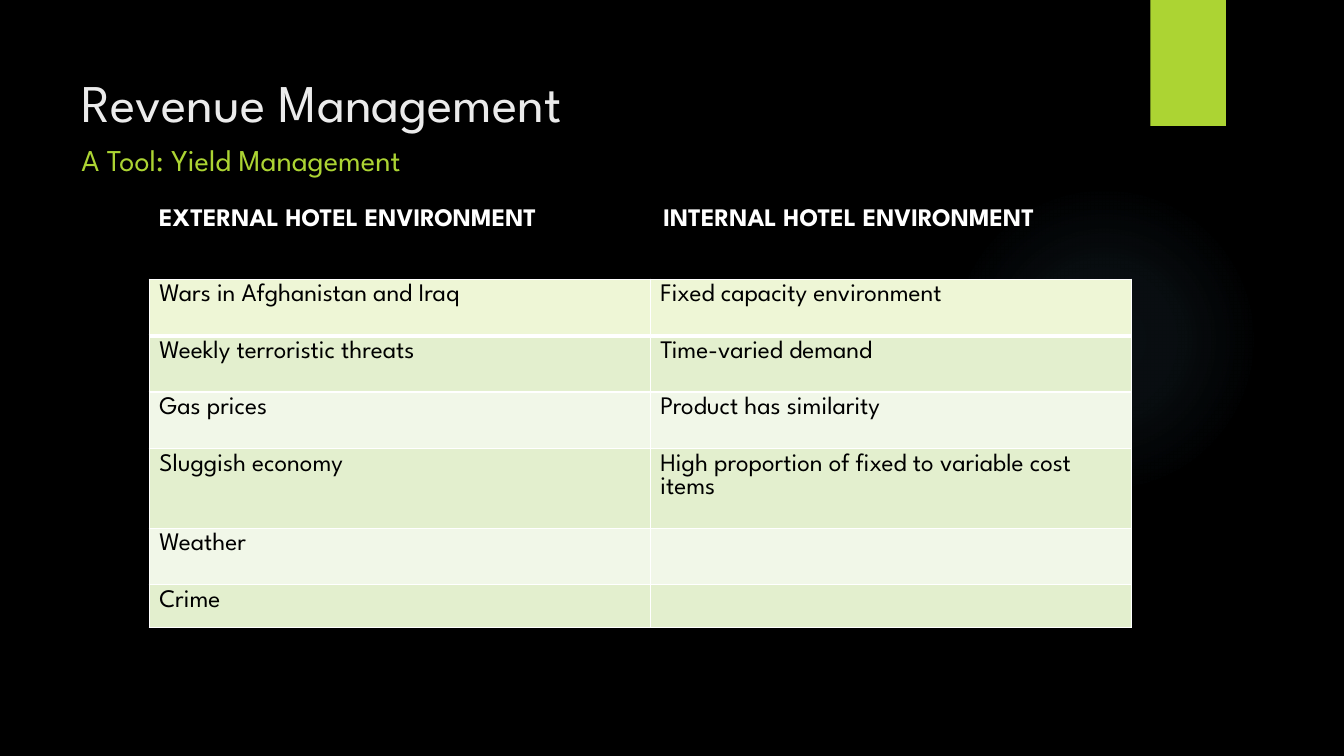
from dataclasses import dataclass

from lxml.etree import SubElement
from pptx import Presentation
from pptx.dml.color import RGBColor as Color
from pptx.enum.shapes import MSO_SHAPE as Preset
from pptx.oxml import parse_xml
from pptx.oxml.ns import nsdecls, qn
from pptx.util import Inches, Pt


@dataclass(frozen=True)
class Theme:
    font: str = "League Spartan"
    background: str = "000000"
    accent: str = "ACD433"
    glow: str = "7AC4F0"
    title: str = "EBEBEB"
    white: str = "FFFFFF"
    ink: str = "000000"
    first_row: str = "EEF6D6"
    bands: tuple = ("F1F7E8", "E3EFCE")
    title_size: float = 37.8
    subtitle_size: float = 21.6
    body_size: float = 18


THEME = Theme()
HEADINGS = ("EXTERNAL HOTEL ENVIRONMENT", "INTERNAL HOTEL ENVIRONMENT")
FACTORS = (
    ("Wars in Afghanistan and Iraq", "Fixed capacity environment"),
    ("Weekly terroristic threats", "Time-varied demand"),
    ("Gas prices", "Product has similarity"),
    ("Sluggish economy", "High proportion of fixed to variable cost items"),
    ("Weather", ""),
    ("Crime", ""),
)
ROW_SHARES = (0.56, 0.56, 0.56, 0.79, 0.56, 0.43)
COLUMN_SHARES = (4.97, 4.77)


def style(para, size, color, bold=False):
    for font in [para.font] + [span.font for span in para.runs]:
        font.name = THEME.font
        font.size = Pt(size)
        font.bold = bold
        font.color.rgb = Color.from_string(color)


def split(total, shares):
    return [int(total * share / sum(shares)) for share in shares]


def add_text_box(slide, box):
    frame = slide.shapes.add_textbox(*box).text_frame
    frame.word_wrap = True
    return frame


def add_plain_shape(slide, preset, box):
    shape = slide.shapes.add_shape(preset, *box)
    shape.shadow.inherit = False
    shape.line.fill.background()
    return shape


def add_decor(slide, glow_box, tab_box):
    glow = add_plain_shape(slide, Preset.OVAL, glow_box)
    stops = "".join(
        f'<a:gs pos="{place * 1000}"><a:srgbClr val="{THEME.glow}">'
        f'<a:alpha val="{alpha * 1000}"/></a:srgbClr></a:gs>'
        for place, alpha in ((0, 7), (36, 6), (69, 0), (100, 0))
    )
    gradient = parse_xml(
        f'<a:gradFill {nsdecls("a")}><a:gsLst>{stops}</a:gsLst><a:path path="circle">'
        '<a:fillToRect l="50000" t="50000" r="50000" b="50000"/></a:path></a:gradFill>'
    )
    glow.element.spPr.find(qn("a:prstGeom")).addnext(gradient)

    tab = add_plain_shape(slide, Preset.RECTANGLE, tab_box)
    tab.fill.solid()
    tab.fill.fore_color.rgb = Color.from_string(THEME.accent)


def add_title(slide, box):
    frame = add_text_box(slide, box)
    frame.text = "Revenue Management\nA Tool: Yield Management"
    title, subtitle = frame.paragraphs
    style(title, THEME.title_size, THEME.title)
    style(subtitle, THEME.subtitle_size, THEME.accent)
    subtitle.space_before = Pt(6)


def add_headings(slide, box):
    frame = add_text_box(slide, box)
    frame.text = "\t".join(HEADINGS)
    para = frame.paragraphs[0]
    tabs = SubElement(para._p.get_or_add_pPr(), qn("a:tabLst"))
    SubElement(tabs, qn("a:tab"), pos=str(Inches(5)), algn="l")
    style(para, THEME.body_size, THEME.white, bold=True)


def set_borders(cell, widths):
    properties = cell._tc.get_or_add_tcPr()
    for place, (side, width) in enumerate(widths.items()):
        properties.insert(place, parse_xml(
            f'<a:ln{side} {nsdecls("a")} w="{Pt(width)}"><a:solidFill>'
            f'<a:srgbClr val="{THEME.white}"/></a:solidFill></a:ln{side}>'
        ))


def add_factor_table(slide, box):
    left, top, width, height = box
    table = slide.shapes.add_table(len(FACTORS), len(HEADINGS), *box).table
    for column, size in zip(table.columns, split(width, COLUMN_SHARES)):
        column.width = size
    for row, size in zip(table.rows, split(height, ROW_SHARES)):
        row.height = size
    for number, texts in enumerate(FACTORS):
        fill = THEME.bands[number % 2] if number else THEME.first_row
        for cell, text in zip(table.rows[number].cells, texts):
            cell.text = text
            style(cell.text_frame.paragraphs[0], THEME.body_size, THEME.ink)
            cell.fill.solid()
            cell.fill.fore_color.rgb = Color.from_string(fill)
            set_borders(cell, {
                "L": 1, "R": 1,
                "T": 3 if number == 1 else 1,
                "B": 3 if number == 0 else 1,
            })


def main():
    deck = Presentation()
    deck.slide_width, deck.slide_height = Inches(13.33), Inches(7.5)
    slide = deck.slides.add_slide(deck.slide_layouts[6])
    slide.background.fill.solid()
    slide.background.fill.fore_color.rgb = Color.from_string(THEME.background)

    def area(left, top, width, height):
        return [Inches(length) for length in (left, top, width, height)]

    add_decor(slide, area(9.41, 1.83, 3.08, 3.08), area(11.41, 0, 0.75, 1.25))
    add_title(slide, area(0.71, 0.64, 10.29, 1.2))
    add_factor_table(slide, area(1.48, 2.77, 9.74, 3.46))
    add_headings(slide, area(1.48, 1.95, 9.61, 0.4))
    deck.save("out.pptx")


if __name__ == "__main__":
    main()
